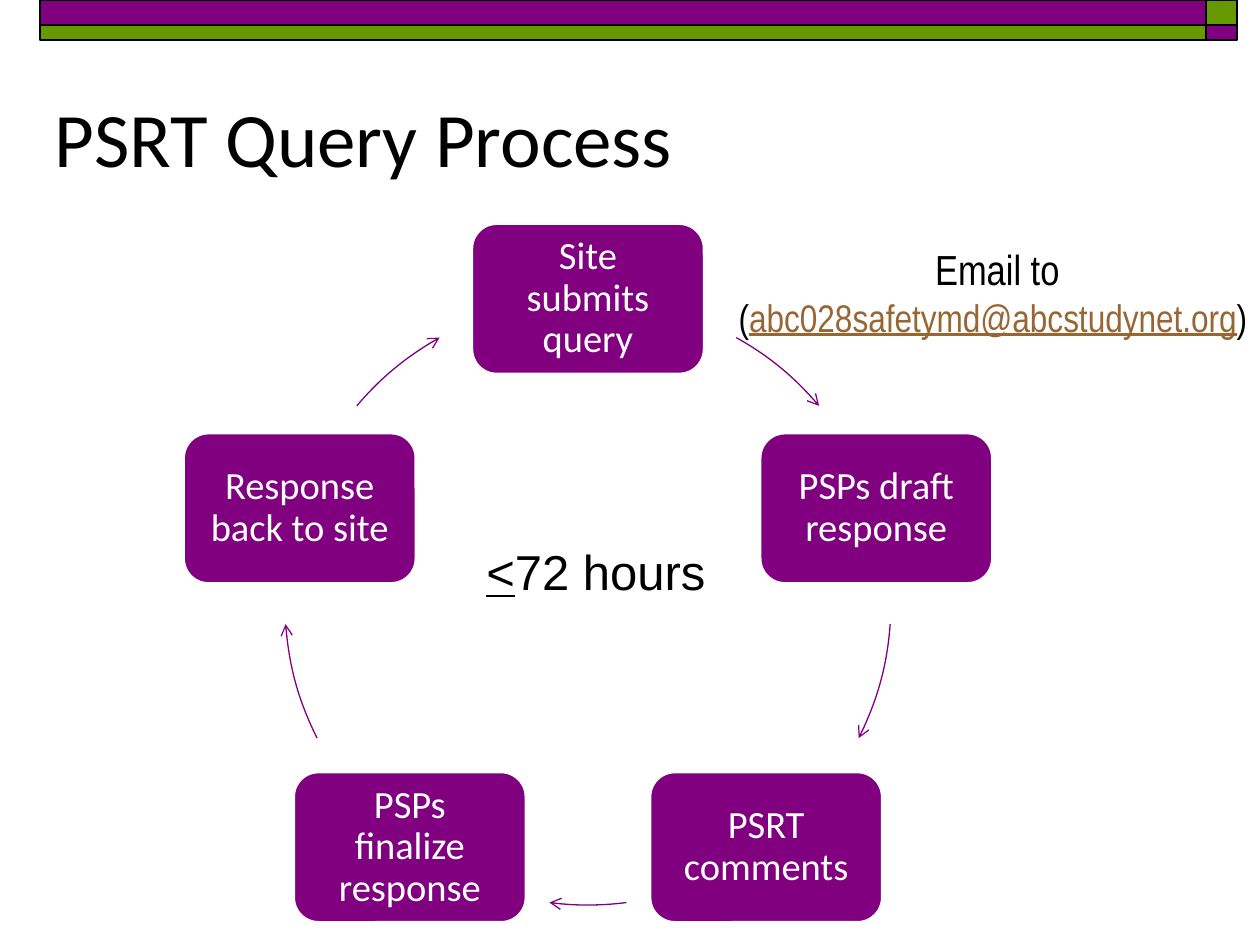
from math import cos, radians, sin

from lxml.etree import SubElement
from pptx import Presentation
from pptx.dml.color import RGBColor
from pptx.enum.shapes import MSO_SHAPE as Shape
from pptx.enum.text import MSO_ANCHOR as Anchor, PP_ALIGN as Align
from pptx.oxml.ns import qn
from pptx.util import Pt

PURPLE = RGBColor(0x80, 0x00, 0x80)
GREEN = RGBColor(0x66, 0x99, 0x00)
BROWN = RGBColor(0x99, 0x66, 0x33)
BLACK = RGBColor(0x00, 0x00, 0x00)
WHITE = RGBColor(0xFF, 0xFF, 0xFF)

CENTER_X, CENTER_Y, RADIUS = 336, 344, 173.2
BOX_W, BOX_H, BOX_INSET = 133.2, 86.4, 10.8
STEPS = ["Site submits query", "PSPs draft response", "PSRT comments",
         "PSPs finalize response", "Response back to site"]
ARROW_ANGLES = [(29.3, 49.7), (94.2, 116.7), (172.7, 187.3),
                (243.3, 265.8), (310.3, 330.7)]


def add_run(p, text, font="Calibri", size=22, color=BLACK, underline=None):
    """Append formatted text to a paragraph."""
    r = p.add_run()
    r.text = text
    r.font.name, r.font.size, r.font.underline = font, Pt(size), underline
    r.font.color.rgb = color


def add_shape(s, kind, left, top, width, height, line, weight, fill=None):
    """Add an outlined preset shape without shadow."""
    sp = s.shapes.add_shape(kind, Pt(left), Pt(top), Pt(width), Pt(height))
    sp.shadow.inherit = False
    if fill is None:
        sp.fill.background()
    else:
        sp.fill.solid()
        sp.fill.fore_color.rgb = fill
    sp.line.color.rgb, sp.line.width = line, Pt(weight)
    return sp


def add_textbox(s, left, top, width, height, wrap=True, anchor=Anchor.TOP, align=Align.CENTER):
    """Add a text box and return its first paragraph."""
    tf = s.shapes.add_textbox(Pt(left), Pt(top), Pt(width), Pt(height)).text_frame
    tf.word_wrap, tf.vertical_anchor = wrap, anchor
    p = tf.paragraphs[0]
    p.alignment = align
    return p


def add_banner(s):
    """Draw the two-row strip with its end colours swapped."""
    for top, height, colors in ((0, 14.4, (PURPLE, GREEN)), (14.4, 8.6, (GREEN, PURPLE))):
        for left, width, fill in zip((23, 689), (666, 18), colors):
            add_shape(s, Shape.RECTANGLE, left, top, width, height, BLACK, 1, fill)


def add_step(s, text, angle):
    """Place a step on the cycle at an angle clockwise from the top."""
    left = CENTER_X + RADIUS * sin(radians(angle)) - BOX_W / 2
    top = CENTER_Y - RADIUS * cos(radians(angle)) - BOX_H / 2
    sp = add_shape(s, Shape.ROUNDED_RECTANGLE, left, top, BOX_W, BOX_H, WHITE, 2, PURPLE)
    tf = sp.text_frame
    tf.word_wrap, tf.vertical_anchor = True, Anchor.MIDDLE
    tf.margin_left = tf.margin_right = tf.margin_top = tf.margin_bottom = Pt(BOX_INSET)
    p = tf.paragraphs[0]
    p.alignment, p.line_spacing = Align.CENTER, 0.9
    add_run(p, text, color=WHITE)


def add_cycle_arrow(s, start, end):
    """Draw an arrow along the cycle between two angles from the top."""
    sp = add_shape(s, Shape.ARC, CENTER_X - RADIUS, CENTER_Y - RADIUS,
                   2 * RADIUS, 2 * RADIUS, PURPLE, 0.75)
    for i, angle in enumerate((start, end)):
        sp.adjustments[i] = (angle - 90) % 360 * 0.6
    SubElement(sp.line._get_or_add_ln(), qn("a:tailEnd"), type="arrow")


def main():
    """Build the query process slide."""
    prs = Presentation()
    prs.slide_width, prs.slide_height = Pt(720), Pt(540)
    s = prs.slides.add_slide(prs.slide_layouts[6])
    add_banner(s)

    p = add_textbox(s, 24, 48, 648, 60, anchor=Anchor.BOTTOM, align=Align.LEFT)
    add_run(p, "PSRT Query Process", size=44)

    for i, (step, angles) in enumerate(zip(STEPS, ARROW_ANGLES)):
        add_step(s, step, i * 360 / len(STEPS))
        add_cycle_arrow(s, *angles)

    p = add_textbox(s, 270, 306, 141, 41, wrap=False)
    add_run(p, "<", font="Arial", size=28, underline=True)
    add_run(p, "72 hours", font="Arial", size=28)

    p = add_textbox(s, 414, 135.4, 311.8, 63.4)
    add_run(p, "Email to ", font="Arial Narrow", size=24)
    add_run(p, "(", font="Arial Narrow")
    add_run(p, "abc028safetymd@abcstudynet.org", font="Arial Narrow", color=BROWN, underline=True)
    add_run(p, ") ", font="Arial Narrow")

    prs.save("out.pptx")


if __name__ == "__main__":
    main()
